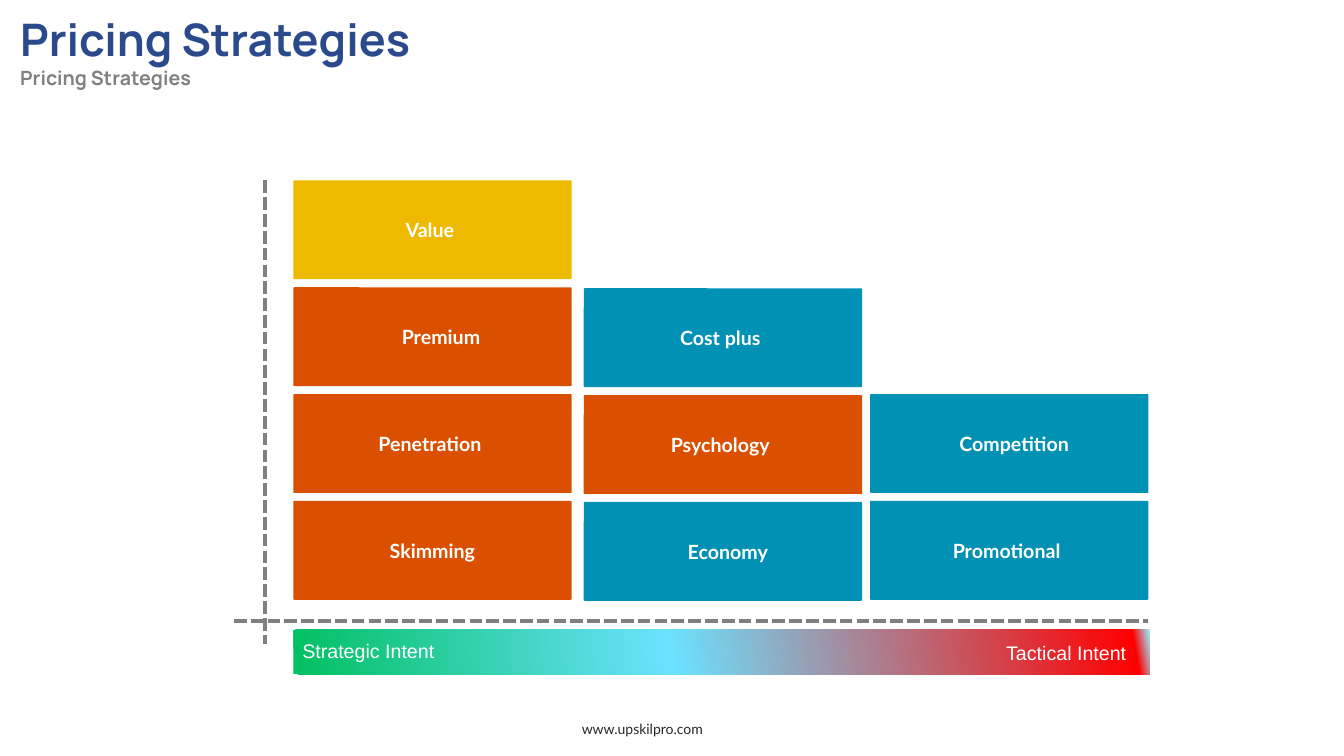
import pptx
import pptx.dml.color
import pptx.enum.dml
import pptx.enum.shapes
import pptx.enum.text
import pptx.oxml
import pptx.util
from pptx.oxml.ns import nsdecls, qn

Inches = pptx.util.Inches
ALIGN = pptx.enum.text.PP_ALIGN
ANCHOR = pptx.enum.text.MSO_ANCHOR
SHAPE = pptx.enum.shapes.MSO_SHAPE

ORANGE, TEAL, YELLOW = "DB5000", "0091B5", "EEBA00"
BLUE, GREY, WHITE, DARK = "2A4A8B", "808080", "FFFFFF", "272727"


def rgb(value):
    return pptx.dml.color.RGBColor.from_string(value)


def write(p, text, font="Lato", size=14, color=WHITE, bold=False, align=ALIGN.LEFT):
    p.alignment = align
    p.line_spacing = 1.0
    r = p.add_run()
    r.text = text
    r.font.name = font
    r.font.size = pptx.util.Pt(size)
    r.font.bold = bold
    r.font.color.rgb = rgb(color)


class Deck:
    def __init__(self):
        self.prs = pptx.Presentation()
        self.prs.slide_width = Inches(13.33)
        self.prs.slide_height = Inches(7.5)
        self.s = self.prs.slides.add_slide(self.prs.slide_layouts[5])

    def title(self, x, y, w, h, title, subtitle):
        sp = self.s.shapes.title
        sp.left, sp.top, sp.width, sp.height = map(Inches, (x, y, w, h))
        tf = sp.text_frame
        tf.auto_size = pptx.enum.text.MSO_AUTO_SIZE.NONE
        tf.vertical_anchor = ANCHOR.TOP
        write(tf.paragraphs[0], title, font="Manrope", size=32, color=BLUE, bold=True)
        write(tf.add_paragraph(), subtitle, font="Manrope", color=GREY, bold=True)

    def shape(self, kind, x, y, w, h):
        sp = self.s.shapes.add_shape(kind, *map(Inches, (x, y, w, h)))
        sp.shadow.inherit = False
        sp.line.fill.background()
        return sp

    def tile(self, x, y, w, h, text, color, nudge):
        """Draw a labelled tile; nudge widens the left inset, or the right one if negative."""
        sp = self.shape(SHAPE.ROUNDED_RECTANGLE, x, y, w, h)
        sp.adjustments[0] = 0.01
        sp.fill.solid()
        sp.fill.fore_color.rgb = rgb(color)
        tf = sp.text_frame
        tf.word_wrap = True
        tf.vertical_anchor = ANCHOR.MIDDLE
        tf.margin_top = tf.margin_bottom = 0
        tf.margin_left = Inches(max(nudge, 0))
        tf.margin_right = Inches(max(-nudge, 0))
        write(tf.paragraphs[0], text, bold=True, align=ALIGN.CENTER)

    def gradient_bar(self, x, y, w, h, stops, angle):
        sp = self.shape(SHAPE.RECTANGLE, x, y, w, h)
        gs = "".join(
            f'<a:gs pos="{pos * 1000}"><a:srgbClr val="{color}"/></a:gs>'
            for pos, color in stops
        )
        grad = pptx.oxml.parse_xml(
            f'<a:gradFill {nsdecls("a")} rotWithShape="1"><a:gsLst>{gs}</a:gsLst>'
            f'<a:lin ang="{angle * 60000}" scaled="0"/></a:gradFill>'
        )
        sp._element.spPr.find(qn("a:prstGeom")).addnext(grad)

    def text(self, x, y, w, h, text, **style):
        tf = self.s.shapes.add_textbox(*map(Inches, (x, y, w, h))).text_frame
        tf.word_wrap = True
        write(tf.paragraphs[0], text, **style)

    def dashed_line(self, x1, y1, x2, y2):
        line = self.s.shapes.add_connector(
            pptx.enum.shapes.MSO_CONNECTOR.STRAIGHT, *map(Inches, (x1, y1, x2, y2))
        )
        line.line.color.rgb = rgb(GREY)
        line.line.width = pptx.util.Pt(3)
        line.line.dash_style = pptx.enum.dml.MSO_LINE.SQUARE_DOT
        line._element.spPr.append(pptx.oxml.parse_xml(f'<a:effectLst {nsdecls("a")}/>'))


def main():
    deck = Deck()
    deck.title(0.1, 0.07, 10.53, 0.88, "Pricing Strategies", "Pricing Strategies")

    # Each column: left, top of the lowest tile, then tiles from the bottom up
    columns = [
        (2.91, 4.97, [("Skimming", ORANGE, 0), ("Penetration", ORANGE, -0.05),
                      ("Premium", ORANGE, 0.17), ("Value", YELLOW, -0.05)]),
        (5.79, 4.98, [("Economy", TEAL, 0.1), ("Psychology", ORANGE, -0.05),
                      ("Cost plus", TEAL, -0.05)]),
        (8.63, 4.97, [("Promotional", TEAL, -0.05), ("Competition", TEAL, 0.1)]),
    ]
    pitch = 1.06
    for x, bottom, tiles in columns:
        for i, (label, color, nudge) in enumerate(tiles):
            deck.tile(x, bottom - i * pitch, 2.76, 0.98, label, color, nudge)

    deck.dashed_line(2.32, 6.16, 11.39, 6.16)
    deck.dashed_line(2.63, 1.79, 2.63, 6.39)
    deck.gradient_bar(
        2.91, 6.25, 8.49, 0.44,
        [(0, "00C060"), (44, "6BE2FF"), (98, "FF0000"), (100, "9CEBFF")], 350,
    )
    deck.text(2.9, 6.29, 3.87, 0.34, "Strategic Intent", font="Arial")
    deck.text(7.4, 6.31, 3.87, 0.34, "Tactical Intent", font="Arial", align=ALIGN.RIGHT)
    deck.text(4.12, 7.1, 4.5, 0.4, "www.upskilpro.com", size=10, color=DARK,
              align=ALIGN.CENTER)
    deck.prs.save("out.pptx")


if __name__ == "__main__":
    main()
